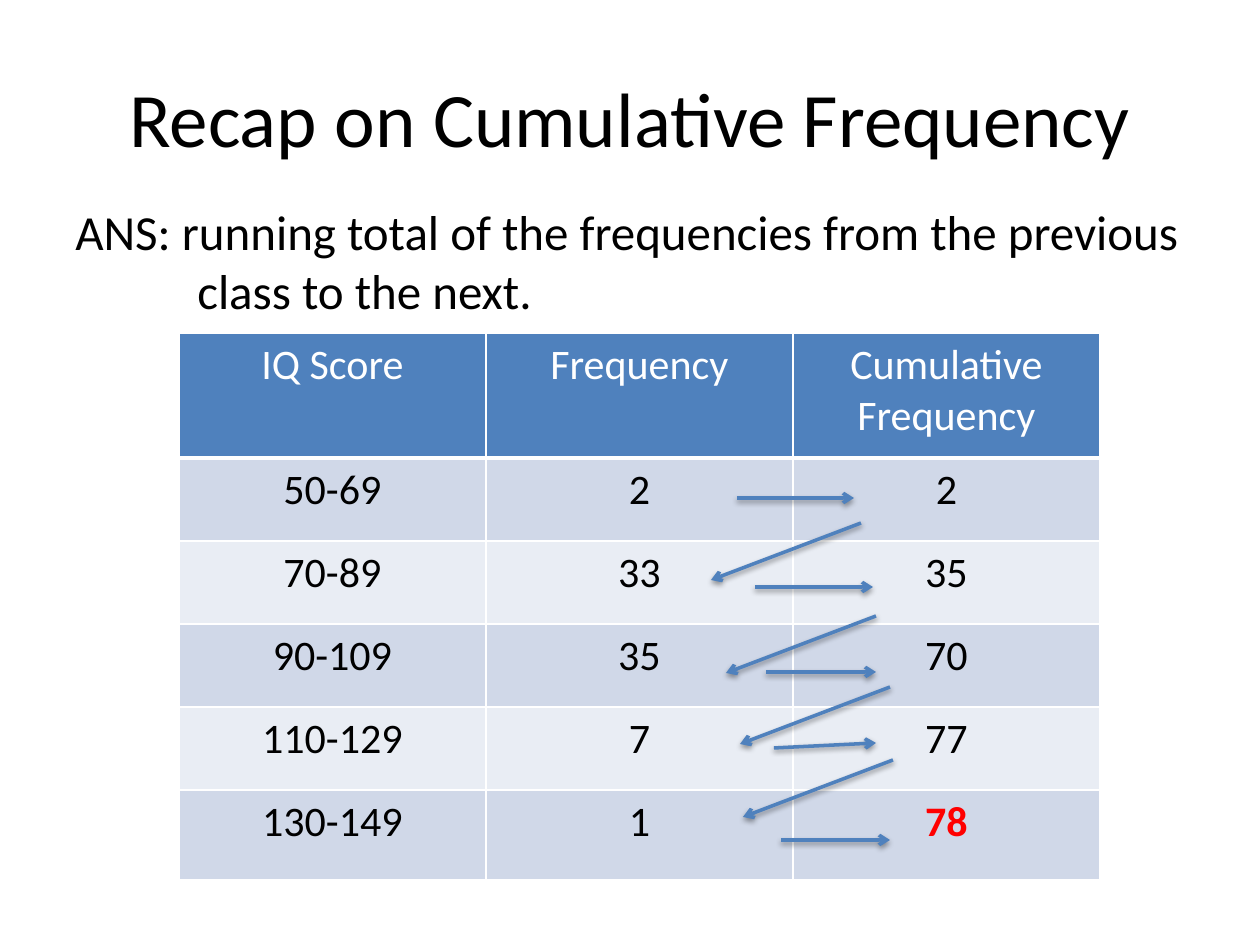
from lxml import etree
from pptx import Presentation
from pptx import util as u
from pptx.dml.color import RGBColor
from pptx.enum import shapes, text
from pptx.oxml import parse_xml
from pptx.oxml.ns import nsdecls, qn

PX = u.Inches(1) / 126
THEME = {
    "font": "Calibri", "ink": "000000", "header": "4F81BD", "header_ink": "FFFFFF",
    "bands": ("D0D8E8", "E9EDF4"), "border": "FFFFFF", "total": "FF0000", "arrow": "4F81BD",
    "title_size": 44, "answer_size": 28, "table_size": 24,
}


def px(*lengths):
    return [u.Emu(round(length * PX)) for length in lengths]


def add_run(paragraph, words, size, color, bold=False):
    run = paragraph.add_run()
    run.text = words
    run.font.name = THEME["font"]
    run.font.size = u.Pt(size)
    run.font.bold = bold
    run.font.color.rgb = RGBColor.from_string(color)


deck = Presentation()
deck.slide_width, deck.slide_height = px(1260, 945)
slide = deck.slides.add_slide(deck.slide_layouts[5])

# Title
title = slide.shapes.title
title.left, title.top, title.width, title.height = px(63, 38, 1134, 157)
title.text_frame.vertical_anchor = text.MSO_ANCHOR.MIDDLE
heading = title.text_frame.paragraphs[0]
heading.alignment = text.PP_ALIGN.CENTER
add_run(heading, "Recap on Cumulative Frequency", THEME["title_size"], THEME["ink"])

# Frequency table
records = [
    ("IQ Score", "Frequency", "Cumulative Frequency"),
    ("50-69", "2", "2"),
    ("70-89", "33", "35"),
    ("90-109", "35", "70"),
    ("110-129", "7", "77"),
    ("130-149", "1", "78"),
]
row_heights = px(125, 83, 83, 83, 83, 90)
scores = slide.shapes.add_table(len(records), 3, *px(179, 333, 921, 547)).table
for column in scores.columns:
    column.width = px(307)[0]

for r, record in enumerate(records):
    scores.rows[r].height = row_heights[r]
    is_header = r == 0
    for c, value in enumerate(record):
        cell = scores.cell(r, c)
        is_total = (r, c) == (len(records) - 1, 2)
        color = THEME["header_ink"] if is_header else THEME["total"] if is_total else THEME["ink"]
        entry = cell.text_frame.paragraphs[0]
        entry.alignment = text.PP_ALIGN.CENTER
        add_run(entry, value, THEME["table_size"], color, is_total)
        # Borders come before the fill in the cell properties
        properties = cell._tc.get_or_add_tcPr()
        for side in "LRTB":
            weight = 3 if is_header and side == "B" else 1
            properties.append(parse_xml(
                f'<a:ln{side} {nsdecls("a")} w="{u.Pt(weight)}"><a:solidFill>'
                f'<a:srgbClr val="{THEME["border"]}"/></a:solidFill></a:ln{side}>'))
        cell.fill.solid()
        cell.fill.fore_color.rgb = RGBColor.from_string(
            THEME["header"] if is_header else THEME["bands"][(r - 1) % 2])

# Answer, with the second line indented
answer = slide.shapes.add_textbox(*px(63, 195, 1169, 131)).text_frame
answer.word_wrap = False
answer.auto_size = text.MSO_AUTO_SIZE.SHAPE_TO_FIT_TEXT
add_run(answer.paragraphs[0], "ANS: running total of the frequencies from the previous",
        THEME["answer_size"], THEME["ink"])
continuation = answer.add_paragraph()
continuation._p.get_or_add_pPr().set("marL", str(px(122)[0]))
add_run(continuation, "class to the next.", THEME["answer_size"], THEME["ink"])

# Arrows: across to each running total, then back to the next frequency
across = [
    (737, 498, 854, 498),
    (755, 587, 873, 587),
    (766, 672, 876, 672),
    (774, 748, 876, 743),
    (781, 840, 890, 840),
]
back_starts = [(861, 523), (876, 616), (890, 687), (893, 760)]
back = [(x, y, x - 150, y + 57) for x, y in back_starts]
for ends in across + back:
    arrow = slide.shapes.add_connector(shapes.MSO_CONNECTOR.STRAIGHT, *px(*ends))
    arrow.line.width = u.Pt(2)
    arrow.line.color.rgb = RGBColor.from_string(THEME["arrow"])
    etree.SubElement(arrow.line._get_or_add_ln(), qn("a:tailEnd"), type="arrow")
    arrow._element.spPr.append(parse_xml(
        f'<a:effectLst {nsdecls("a")}><a:outerShdw blurRad="40000" dist="20000" dir="5400000" '
        'rotWithShape="0"><a:srgbClr val="000000"><a:alpha val="38000"/></a:srgbClr>'
        '</a:outerShdw></a:effectLst>'))

deck.save("out.pptx")
